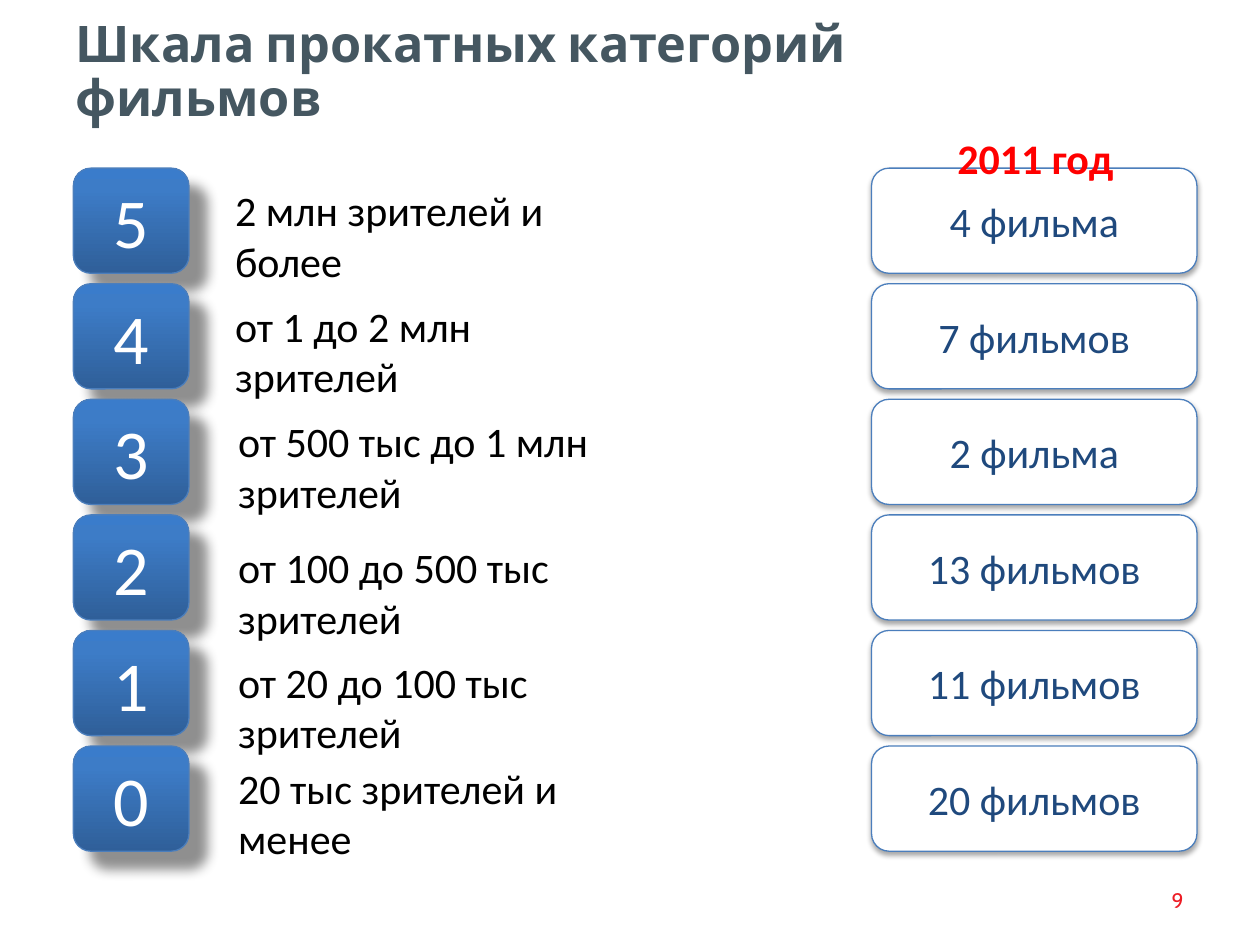
from copy import deepcopy
from dataclasses import dataclass

from lxml import etree
from pptx import Presentation
from pptx.dml.color import RGBColor
from pptx.enum.shapes import MSO_SHAPE
from pptx.enum.text import MSO_ANCHOR, MSO_AUTO_SIZE, PP_ALIGN
from pptx.oxml.ns import qn
from pptx.util import Cm, Pt

ROUNDED = MSO_SHAPE.ROUNDED_RECTANGLE
MIDDLE, TOP = MSO_ANCHOR.MIDDLE, MSO_ANCHOR.TOP
LEFT, CENTER, RIGHT = PP_ALIGN.LEFT, PP_ALIGN.CENTER, PP_ALIGN.RIGHT
FIT_SHAPE, NO_FIT = MSO_AUTO_SIZE.SHAPE_TO_FIT_TEXT, MSO_AUTO_SIZE.NONE

WHITE = RGBColor(0xFF, 0xFF, 0xFF)
BLACK = RGBColor(0x00, 0x00, 0x00)
SLATE = RGBColor(0x45, 0x57, 0x61)
PAGE_RED = RGBColor(0xED, 0x1C, 0x24)
YEAR_RED = RGBColor(0xFF, 0x00, 0x00)
NAVY = RGBColor(0x1F, 0x49, 0x7D)
OUTLINE = RGBColor(0x4B, 0x7E, 0xBC)
BADGE_STOPS = (
    (0, RGBColor(0x2F, 0x5F, 0x99)),
    (0.8, RGBColor(0x3D, 0x7C, 0xC7)),
    (1, RGBColor(0x3A, 0x7C, 0xCB)),
)

HEADING_FONT = "Cabin"
BODY_FONT = "Calibri"
FIRST_ROW_TOP = 3.39
ROW_PITCH = 2.33
ROW_HEIGHT = 2.12


@dataclass(frozen=True)
class Shadow:
    opacity: int
    blur: float
    distance: float
    angle: int


@dataclass(frozen=True)
class Category:
    number: str
    audience: str
    films: str
    label_left: float
    label_top: float
    label_width: float


BADGE_SHADOW = Shadow(43, 7, 14, 45)
CARD_SHADOW = Shadow(35, 3.1, 1.8, 90)
CATEGORIES = (
    Category("5", "2 млн зрителей и более", "4 фильма", 4.24, 3.6, 9.17),
    Category("4", "от 1 до 2 млн зрителей", "7 фильмов", 4.24, 5.93, 8.84),
    Category("3", "от 500 тыс до 1 млн зрителей", "2 фильма", 4.3, 8.26, 11.18),
    Category("2", "от 100 до 500 тыс зрителей", "13 фильмов", 4.3, 10.8, 10.36),
    Category("1", "от 20 до 100 тыс зрителей", "11 фильмов", 4.3, 13.11, 9.93),
    Category("0", "20 тыс зрителей и менее", "20 фильмов", 4.3, 15.24, 9.53),
)


def write_text(shape, text: str, *, size: float, color: RGBColor, font: str = BODY_FONT,
               bold: bool = False, align=LEFT, anchor=TOP, wrap: bool = True,
               auto_size=NO_FIT, line_spacing: float = 1.0, indent: float = 0,
               space_after: float = 0) -> None:
    frame = shape.text_frame
    frame.word_wrap = wrap
    frame.auto_size = auto_size
    frame.vertical_anchor = anchor
    paragraph = frame.paragraphs[0]
    paragraph.alignment = align
    paragraph.line_spacing = line_spacing
    paragraph.space_after = Pt(space_after)
    if indent:
        properties = paragraph._p.get_or_add_pPr()
        properties.set("marL", str(Cm(indent)))
        properties.set("indent", "0")
    run = paragraph.add_run()
    run.text = text
    run.font.name = font
    run.font.size = Pt(size)
    run.font.bold = bold
    run.font.color.rgb = color


def add_label(slide, left: float, top: float, width: float, height: float, text: str, **text_format):
    label = slide.shapes.add_textbox(Cm(left), Cm(top), Cm(width), Cm(height))
    write_text(label, text, **text_format)
    return label


def apply_shadow(shape, shadow: Shadow) -> None:
    shape.shadow.inherit = False
    effects = shape._element.spPr.find(qn("a:effectLst"))
    outer = etree.SubElement(
        effects, qn("a:outerShdw"), blurRad=str(Pt(shadow.blur)),
        dist=str(Pt(shadow.distance)), dir=str(shadow.angle * 60000),
        algn="tl", rotWithShape="0")
    color = etree.SubElement(outer, qn("a:srgbClr"), val=str(BLACK))
    etree.SubElement(color, qn("a:alpha"), val=str(shadow.opacity * 1000))


def fill_badge(shape) -> None:
    fill = shape.fill
    fill.gradient()
    fill.gradient_angle = 90
    stop_list = shape._element.spPr.find(".//" + qn("a:gsLst"))
    stop_list.append(deepcopy(stop_list[-1]))
    for stop, (position, color) in zip(fill.gradient_stops, BADGE_STOPS):
        stop.position = position
        stop.color.rgb = color


def add_rounded(slide, left: float, row: int, width: float, shadow: Shadow,
                text: str, size: float, color: RGBColor):
    top = FIRST_ROW_TOP + row * ROW_PITCH
    shape = slide.shapes.add_shape(ROUNDED, Cm(left), Cm(top), Cm(width), Cm(ROW_HEIGHT))
    shape.line.color.rgb = OUTLINE
    shape.line.width = Pt(0.75)
    shape.fill.solid()
    shape.fill.fore_color.rgb = WHITE
    apply_shadow(shape, shadow)
    write_text(shape, text, size=size, color=color, align=CENTER, anchor=MIDDLE)
    return shape


def main() -> None:
    presentation = Presentation()
    presentation.slide_width, presentation.slide_height = Cm(25.4), Cm(19.05)
    slide = presentation.slides.add_slide(presentation.slide_layouts[5])

    title = slide.shapes.title
    title.left, title.top, title.width, title.height = Cm(1.27), Cm(0.76), Cm(19.38), Cm(1.42)
    write_text(title, "Шкала прокатных категорий фильмов", size=28.8, color=SLATE,
               font=HEADING_FONT, bold=True, anchor=MIDDLE, line_spacing=0.9)
    add_label(slide, 22.81, 17.63, 1.3, 1.02, "9", size=12, color=PAGE_RED,
              font=HEADING_FONT, align=RIGHT, anchor=MIDDLE)

    for row, category in enumerate(CATEGORIES):
        badge = add_rounded(slide, 1.48, row, 2.33, BADGE_SHADOW, category.number, 40, WHITE)
        fill_badge(badge)
        add_label(slide, category.label_left, category.label_top, category.label_width, 1.27,
                  category.audience, size=24, color=BLACK, wrap=False,
                  auto_size=FIT_SHAPE, indent=0.25, space_after=6)
        add_rounded(slide, 17.57, row, 6.56, CARD_SHADOW, category.films, 24, NAVY)

    add_label(slide, 19.05, 2.54, 3.68, 1.27, "2011 год", size=24, color=YEAR_RED,
              bold=True, wrap=False, auto_size=FIT_SHAPE)
    presentation.save("out.pptx")


if __name__ == "__main__":
    main()
